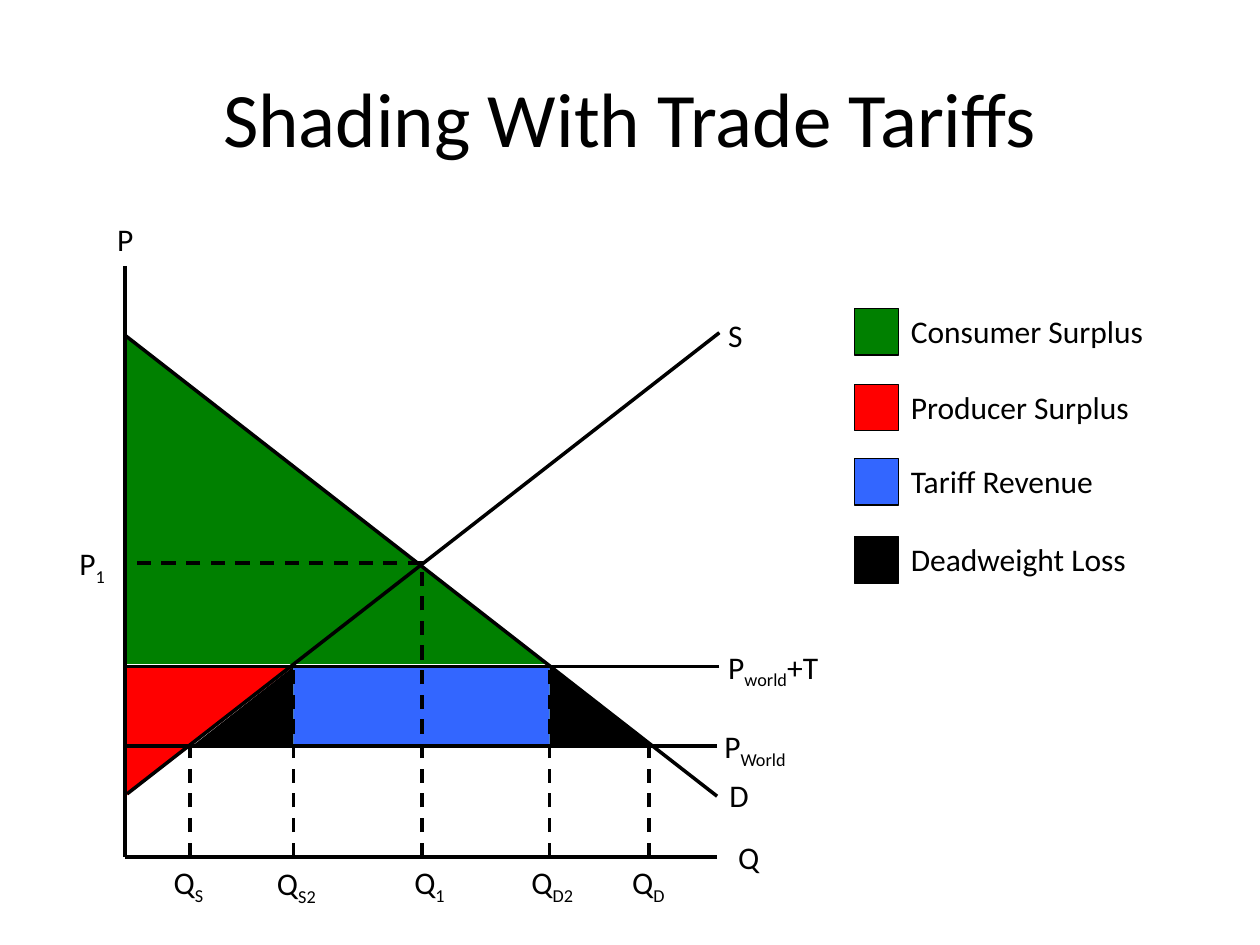
from dataclasses import dataclass

from lxml.etree import SubElement
from pptx import Presentation
from pptx.dml.color import RGBColor
from pptx.enum.dml import MSO_LINE
from pptx.enum.shapes import MSO_CONNECTOR, MSO_SHAPE
from pptx.enum.text import MSO_ANCHOR, MSO_AUTO_SIZE, PP_ALIGN
from pptx.oxml.ns import qn
from pptx.util import Pt

BLACK, GREEN, RED, BLUE = "000000", "008000", "FF0000", "3366FF"
LABEL_HEIGHT = 28.8

# Positions on the diagram, in points
AXIS_X, LINE_END = 71.3, 409.8
Q_S, Q_S2, Q_1, Q_D2, Q_D = 108.6, 167.8, 241.2, 313.9, 370.9
AXIS_TOP, DEMAND_TOP, SUPPLY_TOP = 151.9, 191.5, 190.1
P_1, P_TARIFF, P_WORLD = 321.8, 380.9, 426.2
SUPPLY_BOTTOM, DEMAND_BOTTOM, AXIS_Y = 453.6, 455, 489.6


@dataclass(frozen=True)
class Area:
    left: float
    top: float
    right: float
    bottom: float
    fill: str
    kind: MSO_SHAPE = MSO_SHAPE.RIGHT_TRIANGLE
    flip: str = ""
    outline: str = ""


@dataclass(frozen=True)
class Line:
    x1: float
    y1: float
    x2: float
    y2: float
    dashed: bool = False


@dataclass(frozen=True)
class Label:
    left: float
    top: float
    width: float
    text: str
    subscript: str = ""
    suffix: str = ""


@dataclass(frozen=True)
class LegendEntry:
    top: float
    width: float
    fill: str
    text: str


AREAS = [
    Area(AXIS_X, DEMAND_TOP, Q_D2 - 0.7, 379.4, GREEN),
    Area(72, P_TARIFF, Q_S2, 455, RED, flip="flipV"),
    Area(Q_D2, P_TARIFF, Q_D, P_WORLD - 0.7, BLACK),
    Area(110.9, P_TARIFF, Q_S2, P_WORLD - 0.7, BLACK, flip="flipH"),
    Area(Q_S2, P_TARIFF, Q_D2, P_WORLD - 0.7, BLUE, MSO_SHAPE.RECTANGLE, outline="4B7EBC"),
]

LINES = [
    Line(AXIS_X, AXIS_TOP, AXIS_X, AXIS_Y),
    Line(LINE_END, AXIS_Y, AXIS_X, AXIS_Y),
    Line(411.1, SUPPLY_TOP, 72.7, SUPPLY_BOTTOM),
    Line(LINE_END, DEMAND_BOTTOM, AXIS_X, DEMAND_TOP),
    Line(LINE_END, P_WORLD, AXIS_X, P_WORLD),
    Line(411.1, P_TARIFF, 72, P_TARIFF),
    Line(Q_1, P_1, AXIS_X, P_1, dashed=True),
] + [
    Line(quantity, AXIS_Y, quantity, top, dashed=True)
    for quantity, top in [(Q_S, P_WORLD), (Q_S2, 379.4), (Q_1, 320.4),
                          (Q_D2, 379.4), (Q_D, P_WORLD)]
]

LABELS = [
    # Axes and curves
    Label(59.8, 122.4, 23.8, "P"),
    Label(414.7, 475.2, 26.6, "Q"),
    Label(409, 177.1, 23, "S"),
    Label(409.7, 439.9, 25.9, "D"),
    # Prices
    Label(38.2, 307.4, 30.2, "P", "1"),
    Label(409, 366.5, 70.6, "P", "world", "+T"),
    Label(406.8, 411.8, 54.7, "P", "World"),
    # Quantities
    Label(92.2, AXIS_Y, 33.1, "Q", "S"),
    Label(151.2, 490.3, 38.9, "Q", "S2"),
    Label(229.7, AXIS_Y, 33.1, "Q", "1"),
    Label(296.6, AXIS_Y, 40.3, "Q", "D2"),
    Label(354.2, AXIS_Y, 34.6, "Q", "D"),
]

LEGEND = [
    LegendEntry(176.4, 149, GREEN, "Consumer Surplus"),
    LegendEntry(219.6, 141.1, RED, "Producer Surplus"),
    LegendEntry(262.1, 121.7, BLUE, "Tariff Revenue"),
    LegendEntry(306.7, 139, BLACK, "Deadweight Loss"),
]


def color(value: str) -> RGBColor:
    return RGBColor.from_string(value)


def add_text(shapes, left: float, top: float, width: float, height: float, text: str, *,
             subscript: str = "", suffix: str = "", size: float = 18,
             align: PP_ALIGN = PP_ALIGN.LEFT, anchor: MSO_ANCHOR = MSO_ANCHOR.TOP,
             wrap: bool = False) -> None:
    box = shapes.add_textbox(Pt(left), Pt(top), Pt(width), Pt(height))
    frame = box.text_frame
    frame.word_wrap = wrap
    frame.vertical_anchor = anchor
    frame.auto_size = MSO_AUTO_SIZE.NONE if wrap else MSO_AUTO_SIZE.SHAPE_TO_FIT_TEXT
    para = frame.paragraphs[0]
    para.alignment = align
    for part, baseline in [(text, 0), (subscript, -25000), (suffix, 0)]:
        if not part:
            continue
        span = para.add_run()
        span.text = part
        span.font.name = "Calibri"
        span.font.size = Pt(size)
        span.font.color.rgb = color(BLACK)
        if baseline:
            span.font._element.set("baseline", str(baseline))


def add_area(shapes, area: Area) -> None:
    shape = shapes.add_shape(area.kind, Pt(area.left), Pt(area.top),
                             Pt(area.right - area.left), Pt(area.bottom - area.top))
    shape.shadow.inherit = False
    shape.fill.solid()
    shape.fill.fore_color.rgb = color(area.fill)
    if area.outline:
        shape.line.color.rgb = color(area.outline)
        shape.line.width = Pt(0.75)
    else:
        shape.line.fill.background()
    if area.flip:
        shape.element.spPr.find(qn("a:xfrm")).set(area.flip, "1")


def add_line(shapes, line: Line) -> None:
    connector = shapes.add_connector(MSO_CONNECTOR.STRAIGHT, Pt(line.x1), Pt(line.y1),
                                     Pt(line.x2), Pt(line.y2))
    connector.line.color.rgb = color(BLACK)
    connector.line.width = Pt(2)
    if line.dashed:
        connector.line.dash_style = MSO_LINE.DASH
    SubElement(connector.element.spPr, qn("a:effectLst"))


def add_legend_entry(shapes, entry: LegendEntry) -> None:
    group = shapes.add_group_shape().shapes
    add_area(group, Area(488.2, entry.top, 513.4, entry.top + 26.6, entry.fill,
                         MSO_SHAPE.RECTANGLE, outline=BLACK))
    add_text(group, 513.4, entry.top - 1.4, entry.width, LABEL_HEIGHT, entry.text)


def main() -> None:
    deck = Presentation()
    deck.slide_width, deck.slide_height = Pt(720), Pt(540)
    page = deck.slides.add_slide(deck.slide_layouts[6])
    shapes = page.shapes

    # Shaded areas lie beneath the curves
    for area in AREAS:
        add_area(shapes, area)

    # Title
    add_text(shapes, 36, 21.6, 648, 90, "Shading With Trade Tariffs", size=44,
             align=PP_ALIGN.CENTER, anchor=MSO_ANCHOR.MIDDLE, wrap=True)

    # Axes, curves and guides, with their labels
    for line in LINES:
        add_line(shapes, line)
    for label in LABELS:
        add_text(shapes, label.left, label.top, label.width, LABEL_HEIGHT, label.text,
                 subscript=label.subscript, suffix=label.suffix)

    # Legend
    for entry in LEGEND:
        add_legend_entry(shapes, entry)

    deck.save("out.pptx")


if __name__ == "__main__":
    main()
